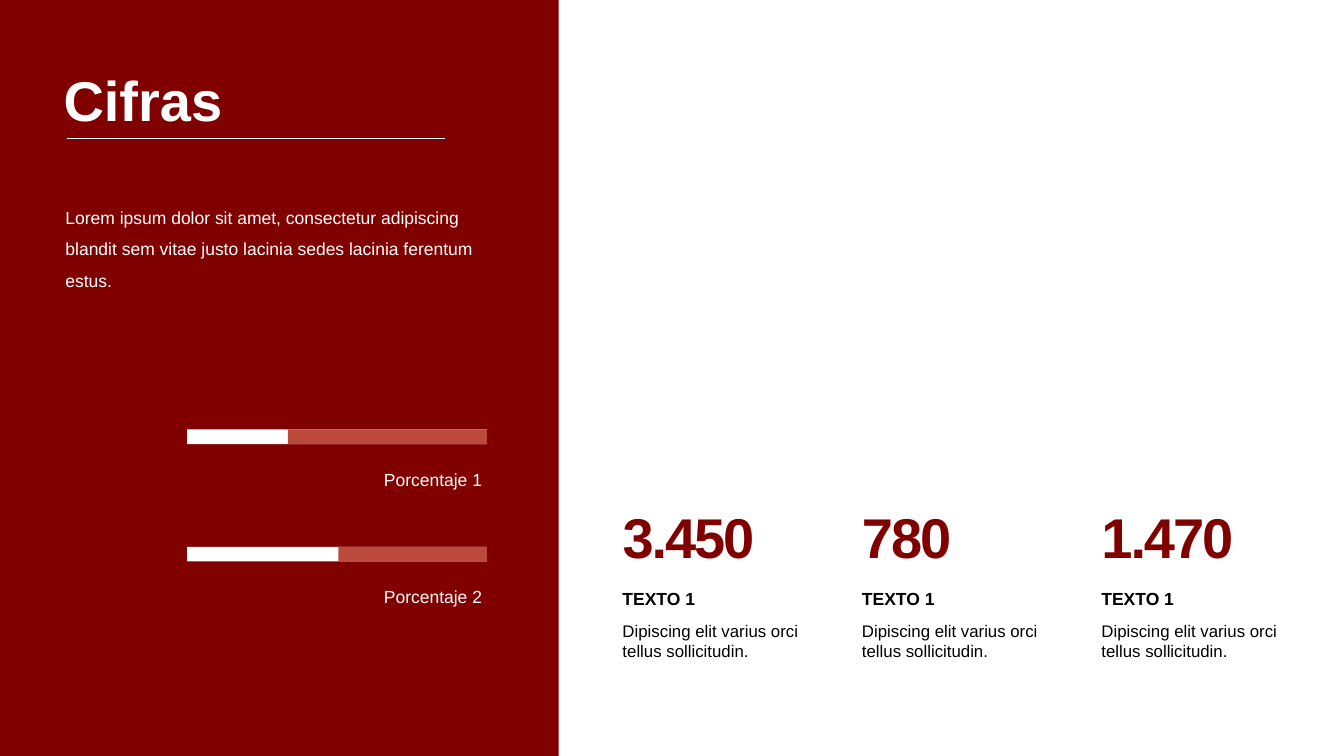
"""Builds the "Cifras" slide: a red panel with progress bars beside three key figures."""
from lxml.etree import SubElement
from pptx import Presentation
from pptx.dml.color import RGBColor
from pptx.enum.shapes import MSO_CONNECTOR as Connector, MSO_SHAPE as Shape
from pptx.enum.text import MSO_ANCHOR as Anchor, MSO_AUTO_SIZE as AutoSize, PP_ALIGN as Align
from pptx.oxml.ns import qn
from pptx.util import Pt

PX = 9144
COLORS = {"panel": "800000", "track": "BB493C", "light": "FFFFFF", "dark": "000000"}


def write(holder, lines, color, bold=False, spacing=1.0, align=Align.LEFT):
    frame = holder.text_frame
    frame.word_wrap = True
    frame.auto_size = AutoSize.NONE
    frame.vertical_anchor = Anchor.TOP
    frame.text = "\n".join(text for text, size in lines)
    for paragraph, (text, size) in zip(frame.paragraphs, lines):
        paragraph.alignment = align
        paragraph.line_spacing = spacing
        font = paragraph.runs[0].font
        font.name = "Arial"
        font.size = Pt(size)
        font.bold = bold
        font.color.rgb = RGBColor.from_string(COLORS[color])
    return frame.paragraphs


def block(left, top, width, height, color):
    rect = slide.shapes.add_shape(Shape.RECTANGLE, left * PX, top * PX, width * PX, height * PX)
    rect.shadow.inherit = False
    rect.fill.solid()
    rect.fill.fore_color.rgb = RGBColor.from_string(COLORS[color])
    rect.line.fill.background()
    return rect


deck = Presentation()
deck.slide_width, deck.slide_height = 2666 * PX, 1500 * PX
slide = deck.slides.add_slide(deck.slide_layouts[5])

panel = block(0, 0, 1108, 1504, "panel")

title = slide.shapes.title
title.left, title.top, title.width, title.height = 116 * PX, 150 * PX, 733 * PX, 122 * PX
write(title, [("Cifras", 80)], "light", bold=True, spacing=0.8)
panel.element.addnext(title.element)

underline = slide.shapes.add_connector(Connector.STRAIGHT, 133 * PX, 275 * PX, 883 * PX, 275 * PX)
underline.line.color.rgb = RGBColor.from_string(COLORS["light"])
underline.line.width = Pt(0.5)
SubElement(underline.element.spPr, qn("a:effectLst"))

intro = slide.shapes.add_textbox(120 * PX, 384 * PX, 838 * PX, 259 * PX)
write(intro, [("Lorem ipsum dolor sit amet, consectetur adipiscing blandit sem vitae "
               "justo lacinia sedes lacinia ferentum estus.", 25)], "light", spacing=1.5)

BAR_LEFT, BAR_WIDTH = 371, 595
for row, (caption, filled) in enumerate([("Porcentaje 1", 200), ("Porcentaje 2", 300)]):
    top = 852 + 233 * row
    block(BAR_LEFT, top, BAR_WIDTH, 29, "light")
    block(BAR_LEFT + filled, top, BAR_WIDTH - filled, 29, "track")
    label = slide.shapes.add_textbox(291 * PX, (top + 73) * PX, 675 * PX, 52 * PX)
    write(label, [(caption, 25)], "light", align=Align.RIGHT)

for column, value in enumerate(["3.450", "780", "1.470"]):
    left = 1225 + 475 * column
    figure = slide.shapes.add_textbox(left * PX, 1017 * PX, 342 * PX, 122 * PX)
    number, = write(figure, [(value, 80)], "panel", bold=True, spacing=0.8)
    number.runs[0].font._element.set("spc", "-300")

    details = slide.shapes.add_textbox(left * PX, 1141 * PX, 400 * PX, 179 * PX)
    heading, description = write(
        details, [("TEXTO 1", 25), ("Dipiscing elit varius orci tellus sollicitudin.", 24)], "dark")
    heading.line_spacing = 1.5
    heading.runs[0].font.bold = True
    description.space_before = Pt(17)

deck.save("out.pptx")
